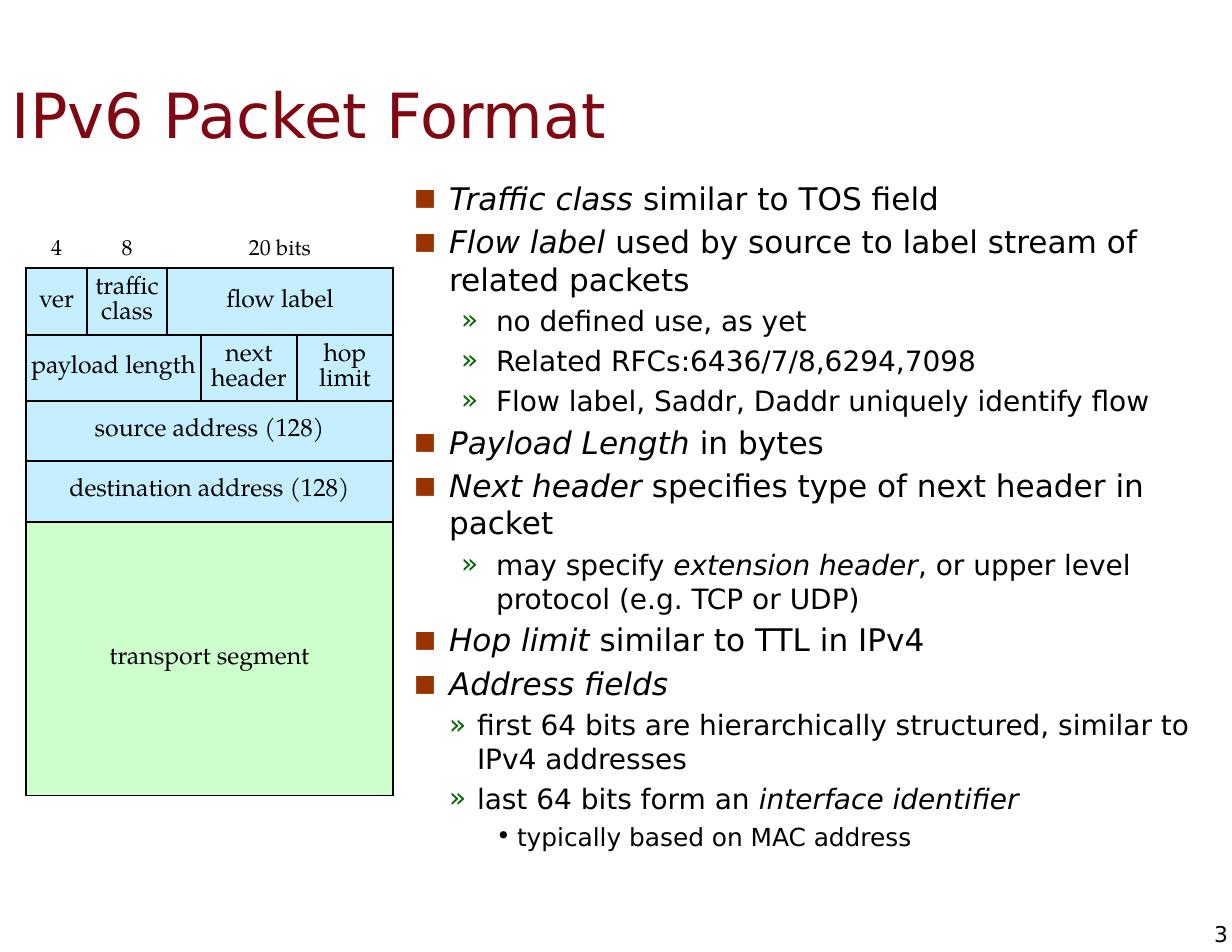
"""Build the IPv6 packet format slide."""
from dataclasses import dataclass

from lxml.etree import SubElement
from pptx import Presentation
from pptx.dml.color import RGBColor
from pptx.enum.text import MSO_ANCHOR, PP_ALIGN
from pptx.oxml.ns import qn
from pptx.slide import Slide
from pptx.table import _Cell
from pptx.text.text import TextFrame, _Paragraph
from pptx.util import Emu, Pt

PX = 914400 / 112
SANS = "DejaVu Sans"
SERIF = "TeX Gyre Pagella"
BLACK = RGBColor(0x00, 0x00, 0x00)
MAROON = RGBColor(0x7F, 0x08, 0x13)
RUST = RGBColor(0x99, 0x33, 0x00)
GREEN = RGBColor(0x00, 0x66, 0x00)
HEADER_BLUE = RGBColor(0xC5, 0xEE, 0xFF)
SEGMENT_GREEN = RGBColor(0xCC, 0xFF, 0xCC)


@dataclass(frozen=True)
class Level:
    depth: int
    size: int
    margin: int
    hanging: int
    bullet: str
    color: RGBColor
    bullet_percent: int = 100


@dataclass(frozen=True)
class Field:
    row: int
    column: int
    span: int
    label: str
    fill: RGBColor | None = HEADER_BLUE


TOPIC = Level(0, 20, 35, 35, "■", RUST, 75)
DETAIL = Level(1, 18, 82, 35, "»", GREEN)
ADDRESS = Level(1, 18, 63, 28, "»", GREEN)
REMARK = Level(2, 16, 103, 21, "•", BLACK)

POINTS = [
    (TOPIC, "*Traffic class* similar to TOS field"),
    (TOPIC, "*Flow label* used by source to label stream of related packets"),
    (DETAIL, "no defined use, as yet"),
    (DETAIL, "Related RFCs:6436/7/8,6294,7098"),
    (DETAIL, "Flow label, Saddr, Daddr uniquely identify flow"),
    (TOPIC, "*Payload Length *in bytes"),
    (TOPIC, "*Next header* specifies type of next header in packet"),
    (DETAIL, "may specify *extension header*, or upper level protocol (e.g. TCP or UDP)"),
    (TOPIC, "*Hop limit* similar to TTL in IPv4"),
    (TOPIC, "*Address fields*"),
    (ADDRESS, "first 64 bits are hierarchically structured, similar to IPv4 addresses"),
    (ADDRESS, "last 64 bits form an *interface identifier*"),
    (REMARK, "typically based on MAC address"),
]

COLUMN_WIDTHS = [61, 80, 34, 96, 96]
ROW_HEIGHTS = [57, 67, 66, 60, 61, 274]
FIELDS = [
    Field(0, 0, 1, "4", None),
    Field(0, 1, 1, "8", None),
    Field(0, 2, 3, "20 bits", None),
    Field(1, 0, 1, "ver"),
    Field(1, 1, 1, "traffic class"),
    Field(1, 2, 3, "flow label"),
    Field(2, 0, 3, "payload length"),
    Field(2, 3, 1, "next header"),
    Field(2, 4, 1, "hop limit"),
    Field(3, 0, 5, "source address (128)"),
    Field(4, 0, 5, "destination address (128)"),
    Field(5, 0, 5, "transport segment", SEGMENT_GREEN),
]


def px(length: int) -> Emu:
    """Turn whole pixels into EMU."""
    return Emu(round(length * PX))


def set_font(paragraph: _Paragraph, name: str, size: int, color: RGBColor) -> None:
    """Set the font shared by all runs of a paragraph."""
    paragraph.font.name = name
    paragraph.font.size = Pt(size)
    paragraph.font.color.rgb = color


def add_text(slide: Slide, left: int, top: int, width: int, height: int,
             inset_x: int, inset_y: int, anchor: MSO_ANCHOR) -> TextFrame:
    """Add an empty wrapping text box and return its frame."""
    frame = slide.shapes.add_textbox(px(left), px(top), px(width), px(height)).text_frame
    frame.word_wrap = True
    frame.vertical_anchor = anchor
    frame.margin_left = frame.margin_right = px(inset_x)
    frame.margin_top = frame.margin_bottom = px(inset_y)
    return frame


def add_bullet(paragraph: _Paragraph, level: Level) -> None:
    """Give a paragraph the indent and bullet of its level."""
    properties = paragraph._p.get_or_add_pPr()
    properties.set("marL", str(px(level.margin)))
    properties.set("indent", str(-px(level.hanging)))
    bullet_color = SubElement(properties, qn("a:buClr"))
    SubElement(bullet_color, qn("a:srgbClr")).set("val", str(level.color))
    SubElement(properties, qn("a:buSzPct")).set("val", str(level.bullet_percent * 1000))
    SubElement(properties, qn("a:buFont")).set("typeface", SANS)
    SubElement(properties, qn("a:buChar")).set("char", level.bullet)


def write_points(frame: TextFrame) -> None:
    """Write the bulleted points, with starred phrases in italics."""
    for index, (level, text) in enumerate(POINTS):
        point = frame.add_paragraph() if index else frame.paragraphs[0]
        point.level = level.depth
        add_bullet(point, level)
        if index:
            point.space_before = Pt(4)
        set_font(point, SANS, level.size, BLACK)
        for position, phrase in enumerate(text.split("*")):
            if phrase:
                run = point.add_run()
                run.text = phrase
                run.font.italic = position % 2 == 1


def add_borders(cell: _Cell, edges: str) -> None:
    """Draw thin black borders on the named edges of a cell."""
    properties = cell._tc.get_or_add_tcPr()
    for edge in edges:
        border = SubElement(properties, qn(f"a:ln{edge}"), w=str(Pt(1)))
        fill = SubElement(border, qn("a:solidFill"))
        SubElement(fill, qn("a:srgbClr")).set("val", str(BLACK))


def add_packet(slide: Slide) -> None:
    """Draw the packet layout as a table of fields."""
    packet = slide.shapes.add_table(
        len(ROW_HEIGHTS), len(COLUMN_WIDTHS), px(26), px(211),
        px(sum(COLUMN_WIDTHS)), px(sum(ROW_HEIGHTS))).table
    packet.first_row = packet.horz_banding = False
    for column, width in zip(packet.columns, COLUMN_WIDTHS):
        column.width = px(width)
    for row, height in zip(packet.rows, ROW_HEIGHTS):
        row.height = px(height)
    for field in FIELDS:
        cell = packet.cell(field.row, field.column)
        if field.span > 1:
            cell.merge(packet.cell(field.row, field.column + field.span - 1))
        is_width = field.fill is None
        cell.margin_left = cell.margin_right = cell.margin_top = 0
        cell.margin_bottom = px(6 if is_width else 0)
        cell.vertical_anchor = MSO_ANCHOR.BOTTOM if is_width else MSO_ANCHOR.MIDDLE
        add_borders(cell, "B" if is_width else "LRTB")
        if is_width:
            cell.fill.background()
        else:
            cell.fill.solid()
            cell.fill.fore_color.rgb = field.fill
        cell.text = field.label
        label = cell.text_frame.paragraphs[0]
        label.alignment = PP_ALIGN.CENTER
        set_font(label, SERIF, 14 if is_width else 16, BLACK)


def main() -> None:
    """Build and save the slide."""
    presentation = Presentation()
    presentation.slide_width, presentation.slide_height = px(1232), px(952)
    slide = presentation.slides.add_slide(presentation.slide_layouts[6])

    title = add_text(slide, 0, 75, 1232, 77, 12, 7, MSO_ANCHOR.MIDDLE)
    title.text = "IPv6 Packet Format"
    set_font(title.paragraphs[0], SANS, 40, MAROON)

    write_points(add_text(slide, 402, 172, 829, 780, 12, 7, MSO_ANCHOR.TOP))
    add_packet(slide)

    page_number = add_text(slide, 1190, 920, 38, 27, 0, 0, MSO_ANCHOR.MIDDLE)
    page_number.text = "3"
    page_number.paragraphs[0].alignment = PP_ALIGN.RIGHT
    set_font(page_number.paragraphs[0], SANS, 14, BLACK)

    presentation.save("out.pptx")


if __name__ == "__main__":
    main()
